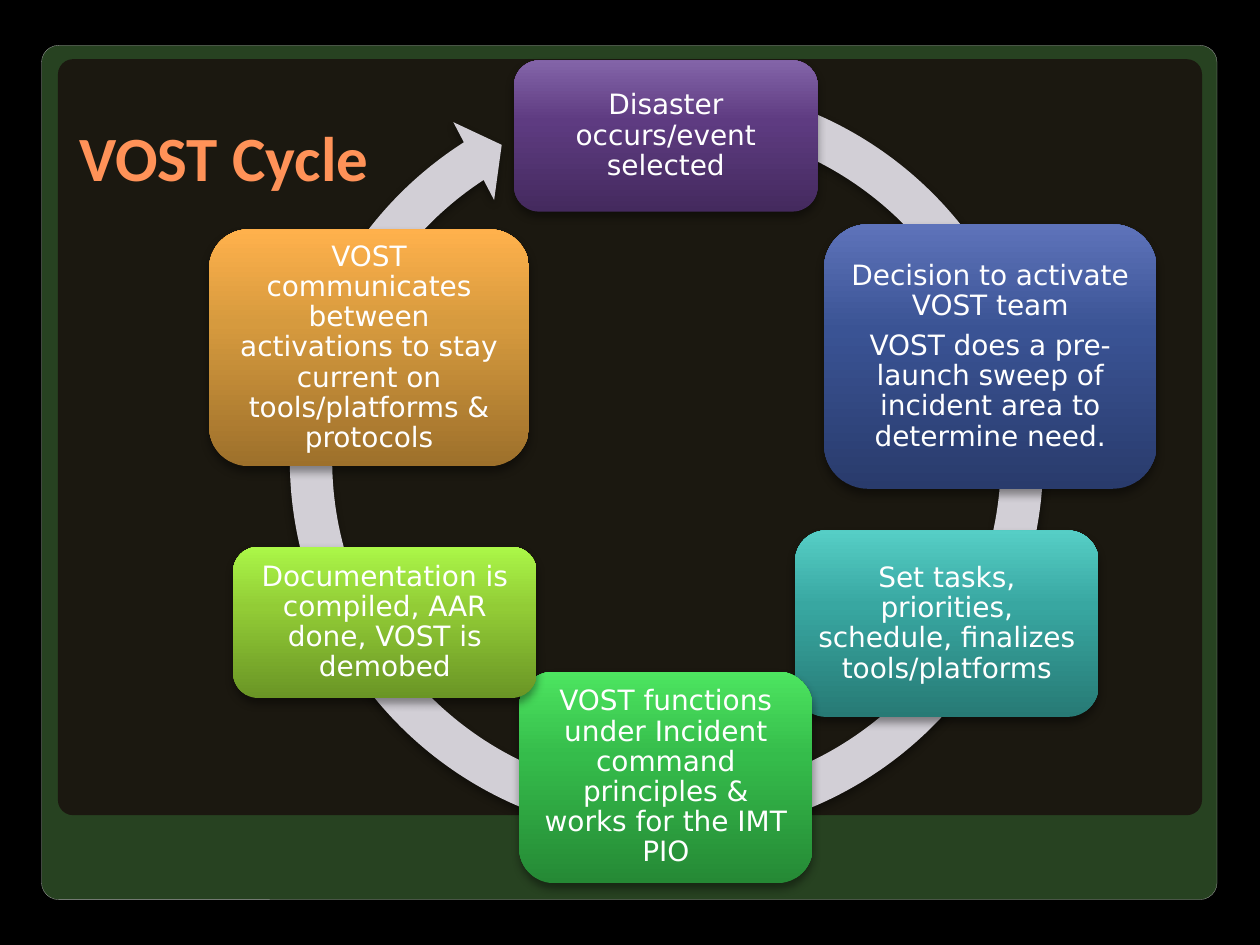
from copy import deepcopy

from lxml import etree
from pptx import Presentation
from pptx.dml.color import RGBColor
from pptx.enum.shapes import MSO_SHAPE
from pptx.enum.text import MSO_ANCHOR, PP_ALIGN
from pptx.oxml.ns import qn
from pptx.util import Inches, Pt

ROUND_RECT = MSO_SHAPE.ROUNDED_RECTANGLE
CIRCULAR_ARROW = MSO_SHAPE.CIRCULAR_ARROW
CENTER = PP_ALIGN.CENTER
MIDDLE, BOTTOM = MSO_ANCHOR.MIDDLE, MSO_ANCHOR.BOTTOM

COLORS = {
    "black": "000000",
    "frame": "274221",
    "frame_line": "A4A4A4",
    "panel": "1B1810",
    "title": "FF9258",
    "ring": "D2CFD6",
    "white": "FFFFFF",
}
# Gradient stops from bottom to top
GRADIENTS = {
    "purple": ("442A5E", "5E3B81", "8364A8"),
    "blue": ("293B6C", "3A5394", "5E73BA"),
    "teal": ("277A75", "38A7A1", "56CEC6"),
    "green": ("258935", "35BC4B", "4DE560"),
    "lime": ("6A9525", "92CC36", "ABF748"),
    "orange": ("9D702B", "D69A3E", "FFB14C"),
}
STOP_POSITIONS = (0, 0.6, 1)

# Cycle steps: box (left, top, width, height), gradient, paragraphs
STEPS = [
    ((4.08, 0.48, 2.41, 1.2), "purple", ["Disaster occurs/event selected"]),
    ((6.54, 1.78, 2.64, 2.1), "blue",
     ["Decision to activate VOST team",
      "VOST does a pre-launch sweep of incident area to determine need."]),
    ((6.31, 4.21, 2.41, 1.48), "teal",
     ["Set tasks, priorities, schedule, finalizes tools/platforms"]),
    ((4.12, 5.33, 2.33, 1.68), "green",
     ["VOST functions under Incident command principles & works for the IMT PIO"]),
    ((1.85, 4.34, 2.41, 1.2), "lime",
     ["Documentation is compiled, AAR done, VOST is demobed"]),
    ((1.66, 1.82, 2.54, 1.88), "orange",
     ["VOST communicates between activations to stay current on "
      "tools/platforms & protocols"]),
]


def rgb(name):
    return RGBColor.from_string(COLORS[name])


class CycleSlide:
    title_font, body_font = "Calibri", "DejaVu Sans"
    title_size, body_size = Pt(36), Pt(16)

    def __init__(self, prs):
        self.s = prs.slides.add_slide(prs.slide_layouts[6])
        self.background("black")

    def background(self, color):
        fill = self.s.background.fill
        fill.solid()
        fill.fore_color.rgb = rgb(color)

    def shape(self, kind, box, color=None, adjustments=()):
        sp = self.s.shapes.add_shape(kind, *map(Inches, box))
        sp.shadow.inherit = False
        sp.line.fill.background()
        for i, value in enumerate(adjustments):
            sp.adjustments[i] = value
        if color:
            sp.fill.solid()
            sp.fill.fore_color.rgb = rgb(color)
        return sp

    def shadow(self, sp, alpha=40, blur=5.2, dist=3):
        effects = sp._element.spPr.find(qn("a:effectLst"))
        outer = etree.SubElement(
            effects, qn("a:outerShdw"), blurRad=str(Pt(blur)), dist=str(Pt(dist)),
            dir="5400000", rotWithShape="0")
        clr = etree.SubElement(outer, qn("a:srgbClr"), val=COLORS["black"])
        etree.SubElement(clr, qn("a:alpha"), val=str(alpha * 1000))

    def gradient(self, sp, colors):
        sp.fill.gradient()
        sp.fill.gradient_angle = 90
        stops = sp._element.spPr.find(qn("a:gradFill")).find(qn("a:gsLst"))
        stops.append(deepcopy(stops[0]))
        for stop, color, pos in zip(sp.fill.gradient_stops, colors, STOP_POSITIONS):
            stop.color.rgb = RGBColor.from_string(color)
            stop.position = pos

    def style_run(self, r, font, size, color, bold=False):
        r.font.name, r.font.size, r.font.bold = font, size, bold
        r.font.color.rgb = rgb(color)

    def title(self, text, box):
        tf = self.s.shapes.add_textbox(*map(Inches, box)).text_frame
        tf.word_wrap = True
        tf.vertical_anchor = BOTTOM
        tf.text = text
        self.style_run(tf.paragraphs[0].runs[0], self.title_font,
                       self.title_size, "title", bold=True)

    def step(self, box, gradient, paragraphs):
        sp = self.shape(ROUND_RECT, box)
        self.gradient(sp, GRADIENTS[gradient])
        self.shadow(sp)
        tf = sp.text_frame
        tf.word_wrap = True
        tf.vertical_anchor = MIDDLE
        tf.margin_left = tf.margin_right = Inches(0.07)
        tf.margin_top = tf.margin_bottom = Inches(0.07)
        tf.text = "\n".join(paragraphs)
        for p in tf.paragraphs:
            p.alignment = CENTER
            p.line_spacing = 0.9
            p.space_after = Pt(5.6)
            self.style_run(p.runs[0], self.body_font, self.body_size, "white")


def main():
    prs = Presentation()
    prs.slide_width, prs.slide_height = Inches(10), Inches(7.5)
    slide = CycleSlide(prs)

    # Frame and inner panel
    frame = slide.shape(ROUND_RECT, (0.33, 0.36, 9.33, 6.78), "frame", [0.02])
    frame.line.color.rgb = rgb("frame_line")
    frame.line.width = Pt(0.16)
    slide.shadow(frame, alpha=25, blur=6, dist=4)
    slide.shape(ROUND_RECT, (0.46, 0.47, 9.08, 6), "panel", [0.02])

    slide.title("VOST Cycle", (0.53, 0.44, 8.95, 1.15))

    # Ring arrow behind the steps
    ring = slide.shape(CIRCULAR_ARROW, (2.12, 0.48, 6.34, 6.34), "ring",
                       [0.053, 3.13, 142.3, 171.26, 0.055])
    slide.shadow(ring)

    # Steps, clockwise from the top
    for box, gradient, paragraphs in STEPS:
        slide.step(box, gradient, paragraphs)

    prs.save("out.pptx")


if __name__ == "__main__":
    main()
